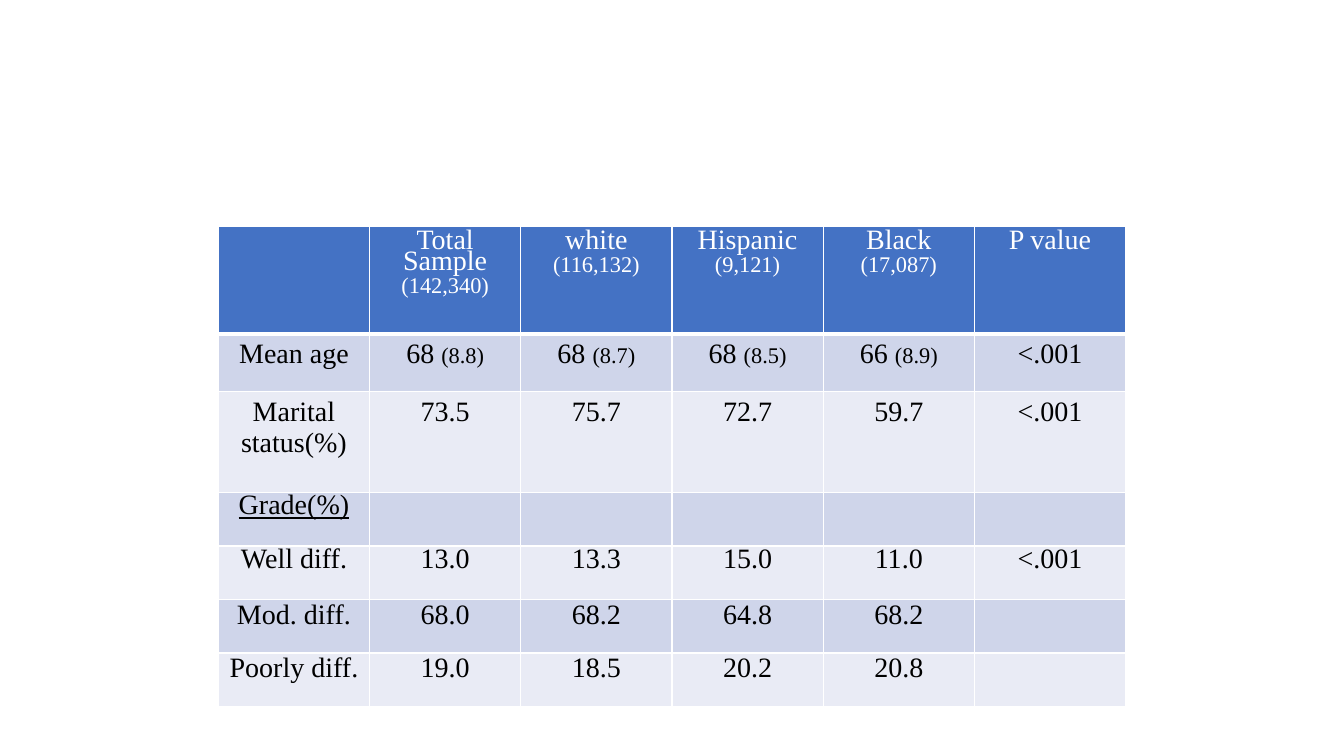
import dataclasses

import lxml.etree
import pptx
import pptx.dml.color
import pptx.enum.text
import pptx.oxml.ns
import pptx.util

EMU_PER_PX = 9525


@dataclasses.dataclass(frozen=True)
class Theme:
    font: str = "Times New Roman"
    main_size: int = 20
    count_size: int = 16
    header_fill: str = "4472C4"
    band_fills: tuple = ("CFD5EA", "E9EBF5")
    header_text: str = "FFFFFF"
    body_text: str = "000000"
    border: str = "FFFFFF"
    border_width: int = 1
    header_rule_width: int = 3


THEME = Theme()
COLUMN_WIDTH = 144
ROW_HEIGHTS = [102, 55, 96, 51, 51, 51, 51]
LINE_SPACINGS = [0.7, None, None, 0.7, 0.7, 0.8, 0.8]

# A cell is a list of paragraphs, and a paragraph a list of (text, size) runs.
MAIN, COUNT = THEME.main_size, THEME.count_size


def group_heading(name, count):
    return [[(name, MAIN)], [(count, COUNT)]]


def mean_with_deviation(mean, deviation):
    return [[(mean + " ", MAIN), (deviation, COUNT)]]


ROWS = [
    [
        "",
        group_heading("Total Sample", "(142,340)"),
        group_heading("white", "(116,132)"),
        group_heading("Hispanic", "(9,121)"),
        group_heading("Black", "(17,087)"),
        "P value",
    ],
    [
        "Mean age",
        mean_with_deviation("68", "(8.8)"),
        mean_with_deviation("68", "(8.7)"),
        mean_with_deviation("68", "(8.5)"),
        mean_with_deviation("66", "(8.9)"),
        "<.001",
    ],
    ["Marital status(%)", "73.5", "75.7", "72.7", "59.7", "<.001"],
    ["Grade(%)", "", "", "", "", ""],
    ["Well diff.", "13.0", "13.3", "15.0", "11.0", "<.001"],
    ["Mod. diff.", "68.0", "68.2", "64.8", "68.2", ""],
    ["Poorly diff.", "19.0", "18.5", "20.2", "20.8", ""],
]


def px(length):
    return pptx.util.Emu(length * EMU_PER_PX)


def rgb(value):
    return pptx.dml.color.RGBColor.from_string(value)


def set_borders(cell, bottom_width):
    """Draw all four borders; they must come before the fill in the XML."""
    properties = cell._tc.get_or_add_tcPr()
    qn = pptx.oxml.ns.qn
    for position, side in enumerate("LRTB"):
        width = bottom_width if side == "B" else THEME.border_width
        line = lxml.etree.Element(qn("a:ln" + side), w=str(pptx.util.Pt(width)))
        fill = lxml.etree.SubElement(line, qn("a:solidFill"))
        lxml.etree.SubElement(fill, qn("a:srgbClr"), val=THEME.border)
        properties.insert(position, line)


def write_cell(cell, content, color, line_spacing):
    paragraphs = [[(content, MAIN)]] if isinstance(content, str) else content
    frame = cell.text_frame
    for index, runs in enumerate(paragraphs):
        paragraph = frame.add_paragraph() if index else frame.paragraphs[0]
        paragraph.alignment = pptx.enum.text.PP_ALIGN.CENTER
        paragraph.space_before = pptx.util.Pt(runs[0][1] * 0.2)
        if line_spacing:
            paragraph.line_spacing = line_spacing
        for text, size in runs:
            run = paragraph.add_run()
            run.text = text
            run.font.name = THEME.font
            run.font.size = pptx.util.Pt(size)
            run.font.bold = False
            run.font.underline = text == "Grade(%)"
            run.font.color.rgb = rgb(color)


def add_patient_table(slide, left, top):
    column_count = len(ROWS[0])
    shape = slide.shapes.add_table(
        len(ROWS), column_count, px(left), px(top),
        px(COLUMN_WIDTH * column_count), px(sum(ROW_HEIGHTS)),
    )
    table = shape.table
    for column in table.columns:
        column.width = px(COLUMN_WIDTH)
    for row_index, contents in enumerate(ROWS):
        table.rows[row_index].height = px(ROW_HEIGHTS[row_index])
        is_header = row_index == 0
        fill = THEME.header_fill if is_header else THEME.band_fills[(row_index - 1) % 2]
        color = THEME.header_text if is_header else THEME.body_text
        rule = THEME.header_rule_width if is_header else THEME.border_width
        for column_index, content in enumerate(contents):
            cell = table.cell(row_index, column_index)
            cell.fill.solid()
            cell.fill.fore_color.rgb = rgb(fill)
            set_borders(cell, rule)
            if content:
                write_cell(cell, content, color, LINE_SPACINGS[row_index])


def main():
    presentation = pptx.Presentation()
    presentation.slide_width = px(1280)
    presentation.slide_height = px(720)
    slide = presentation.slides.add_slide(presentation.slide_layouts[6])
    add_patient_table(slide, left=208, top=216)
    presentation.save("out.pptx")


if __name__ == "__main__":
    main()
